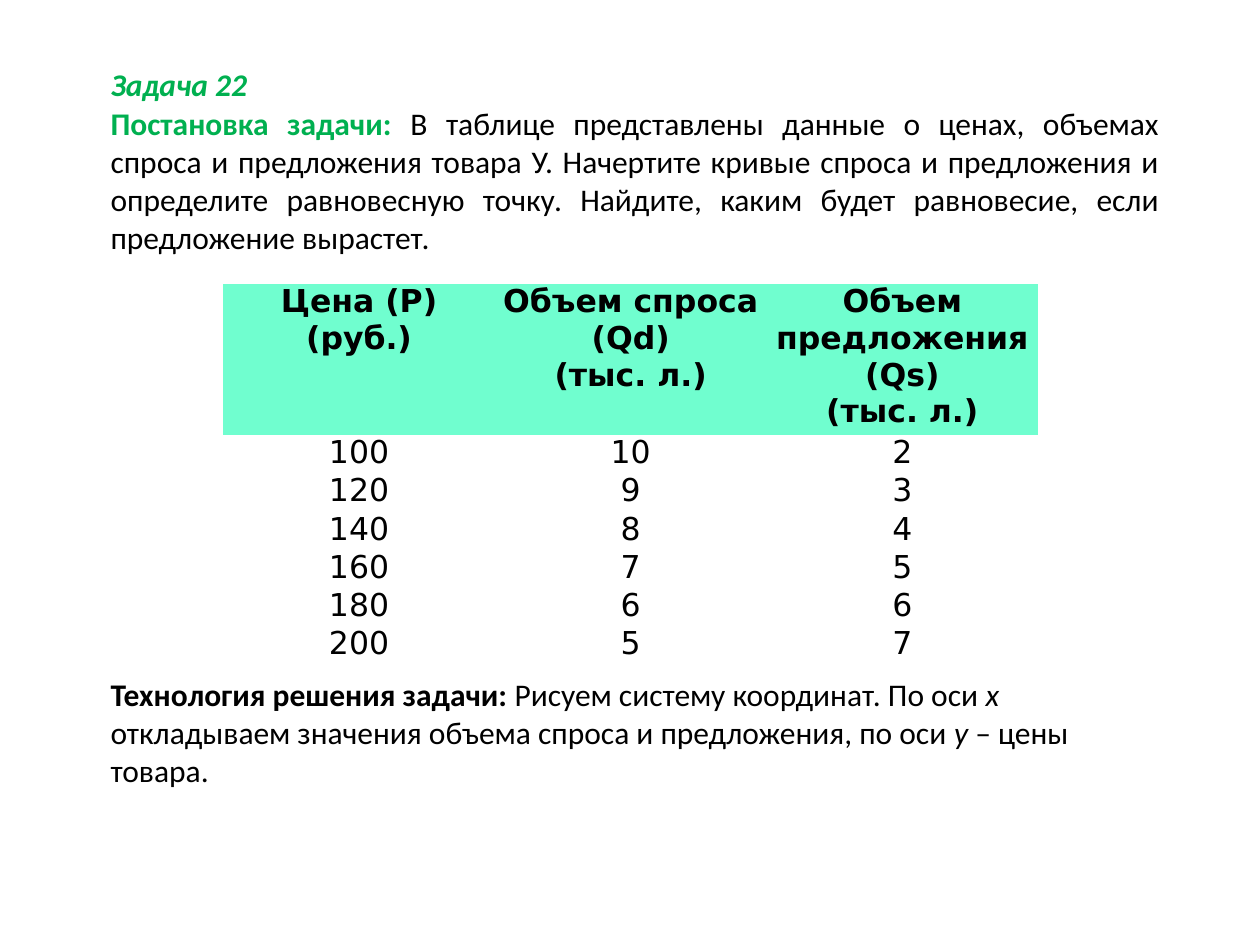
from dataclasses import dataclass

from pptx import Presentation
from pptx import util as u
from pptx.dml import color
from pptx.enum import text


@dataclass(frozen=True)
class Theme:
    body_font: str = "Calibri"
    table_font: str = "DejaVu Sans"
    size: int = 18
    ink: str = "000000"
    accent: str = "00B050"
    header_fill: str = "70FECF"


theme = Theme()


def add_run(paragraph, content, ink=theme.ink, **formats):
    """Add a formatted run to a paragraph."""
    run = paragraph.add_run()
    run.text = content
    values = {"name": theme.body_font, "size": u.Pt(theme.size), "bold": False, "italic": False}
    for name, value in (values | formats).items():
        setattr(run.font, name, value)
    run.font.color.rgb = color.RGBColor.from_string(ink)


def format_frame(shape):
    """Set the frame of a text shape and return its first paragraph."""
    formats = {
        "word_wrap": True,
        "auto_size": text.MSO_AUTO_SIZE.NONE,
        "vertical_anchor": text.MSO_ANCHOR.TOP,
        "margin_top": 0,
        "margin_bottom": 0,
    }
    for name, value in formats.items():
        setattr(shape.text_frame, name, value)
    return shape.text_frame.paragraphs[0]


presentation = Presentation()
presentation.slide_width, presentation.slide_height = u.Cm(25.4), u.Cm(19.05)
slide = presentation.slides.add_slide(presentation.slide_layouts[5])
left, width = u.Cm(1.98), u.Cm(21.64)

# Title
title = slide.shapes.title
title.left, title.top, title.width, title.height = left, u.Cm(1.32), width, u.Cm(0.78)
paragraph = format_frame(title)
paragraph.alignment = text.PP_ALIGN.LEFT
add_run(paragraph, "Задача 22", theme.accent, bold=True, italic=True)

# Problem statement
statement = slide.shapes.add_textbox(left, u.Cm(2.1), width, u.Cm(3.1))
paragraph = format_frame(statement)
paragraph.alignment = text.PP_ALIGN.JUSTIFY
add_run(paragraph, "Постановка задачи: ", theme.accent, bold=True)
add_run(
    paragraph,
    "В таблице представлены данные о ценах, объемах спроса и предложения товара У. "
    "Начертите кривые спроса и предложения и определите равновесную точку. "
    "Найдите, каким будет равновесие, если предложение вырастет.",
)

# Price, demand and supply table: each cell is a tuple of lines
headers = [
    ("Цена (Р)", "(руб.)"),
    ("Объем спроса (Qd)", "(тыс. л.)"),
    ("Объем предложения (Qs)", "(тыс. л.)"),
]
market = [(100, 10, 2), (120, 9, 3), (140, 8, 4), (160, 7, 5), (180, 6, 6), (200, 5, 7)]
rows = [headers] + [[(str(value),) for value in values] for values in market]
header_height, row_height = u.Cm(3.04), u.Cm(0.77)
table = slide.shapes.add_table(
    len(rows), len(headers), u.Cm(4.5), u.Cm(5.72),
    u.Cm(16.43), header_height + row_height * len(market),
).table
table.first_row = table.horz_banding = False
# The style without fills and borders
table._tbl.tblPr[0].text = "{2D5ABB26-0587-4C30-8999-92F81FD0307C}"

for row_index, row in enumerate(rows):
    is_header = row_index == 0
    table.rows[row_index].height = header_height if is_header else row_height
    for column_index, lines in enumerate(row):
        cell = table.cell(row_index, column_index)
        for side in ("left", "top", "right", "bottom"):
            setattr(cell, f"margin_{side}", 0)
        if is_header:
            cell.fill.solid()
            cell.fill.fore_color.rgb = color.RGBColor.from_string(theme.header_fill)
        else:
            cell.fill.background()
        paragraph = cell.text_frame.paragraphs[0]
        paragraph.alignment = text.PP_ALIGN.CENTER
        for line_index, line in enumerate(lines):
            if line_index:
                paragraph.add_line_break()
            add_run(paragraph, line, name=theme.table_font, bold=is_header)

# Solution method
solution = slide.shapes.add_textbox(left, u.Cm(13.61), u.Cm(21.82), u.Cm(3.9))
paragraph = format_frame(solution)
for content, formats in [
    ("Технология решения задачи: ", {"bold": True}),
    ("Рисуем систему координат. По оси ", {}),
    ("х", {"italic": True}),
    (" откладываем значения объема спроса и предложения, по оси ", {}),
    ("у", {"italic": True}),
    (" – цены товара.", {}),
]:
    add_run(paragraph, content, **formats)

presentation.save("out.pptx")
